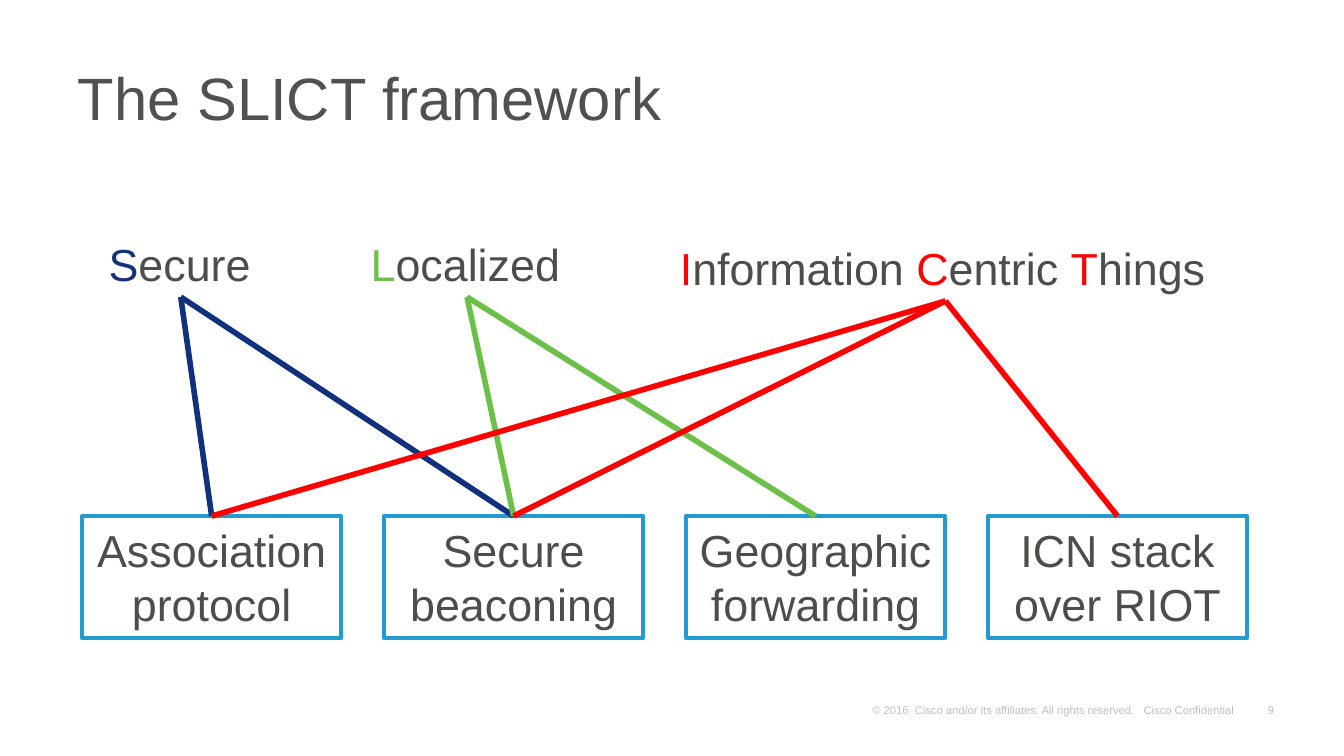
from pptx import Presentation
from pptx.dml.color import RGBColor
from pptx.enum.shapes import MSO_CONNECTOR, MSO_SHAPE
from pptx.enum.text import MSO_ANCHOR, MSO_AUTO_SIZE, PP_ALIGN
from pptx.oxml.ns import qn
from pptx.util import Inches, Pt
from lxml.etree import SubElement

NAVY = RGBColor(0x14, 0x33, 0x7C)
NAVY_LINK = RGBColor(0x11, 0x31, 0x7C)
GREEN = RGBColor(0x6C, 0xC0, 0x4A)
RED = RGBColor(0xFF, 0x00, 0x00)
BLUE = RGBColor(0x23, 0x9B, 0xCF)
GREY = RGBColor(0x4D, 0x4D, 0x4C)
TITLE_GREY = RGBColor(0x51, 0x51, 0x50)
FOOTER_GREY = RGBColor(0xBF, 0xBF, 0xBF)
WHITE = RGBColor(0xFF, 0xFF, 0xFF)

TITLE = "The SLICT framework"
COMPONENTS = ["Association protocol", "Secure beaconing",
              "Geographic forwarding", "ICN stack over RIOT"]
PRINCIPLES = [
    {"words": ["Secure"], "at": (0.71, 1.71, 1.27, 0.5),
     "initial": NAVY, "link": NAVY_LINK, "components": [0, 1]},
    {"words": ["Localized"], "at": (2.66, 1.71, 1.63, 0.5),
     "initial": GREEN, "link": GREEN, "components": [1, 2]},
    {"words": ["Information", "Centric", "Things"], "at": (4.96, 1.74, 4.15, 0.5),
     "initial": RED, "link": RED, "components": [3, 0, 1]},
]
FOOTERS = [
    ("9", (9.31, 5.19, 0.24, 0.17), PP_ALIGN.RIGHT, False),
    ("© 2016  Cisco and/or its affiliates. All rights reserved.   Cisco Confidential",
     (6.42, 5.19, 2.91, 0.17), PP_ALIGN.LEFT, True),
]
SLIDE_WIDTH = 10
SLIDE_HEIGHT = SLIDE_WIDTH * 9 / 16
GRID_LEFT, GRID_RIGHT, GRID_TOP = 0.61, 9.28, 3.84
BOX_WIDTH, BOX_HEIGHT = 1.93, 0.91
COLUMN_PITCH = (GRID_RIGHT - GRID_LEFT - BOX_WIDTH) / (len(COMPONENTS) - 1)
TOP_SITE, BOTTOM_SITE = 0, 2


def add_run(paragraph, text, size, color):
    """Append one formatted run."""
    run = paragraph.add_run()
    run.text = text
    run.font.name = "Arial"
    run.font.size = Pt(size)
    run.font.color.rgb = color


def add_label(slide, at, wrap):
    """Add an empty text box."""
    label = slide.shapes.add_textbox(*map(Inches, at))
    label.text_frame.word_wrap = wrap
    return label


def add_title(slide):
    """Place and format the title."""
    title = slide.shapes.title
    title.left, title.top, title.width, title.height = map(Inches, (0.48, 0.37, 9.13, 0.8))
    title.text_frame.auto_size = MSO_AUTO_SIZE.NONE
    title.text_frame.vertical_anchor = MSO_ANCHOR.MIDDLE
    heading = title.text_frame.paragraphs[0]
    heading.alignment = PP_ALIGN.LEFT
    heading.line_spacing = 0.8
    add_run(heading, TITLE, 32, TITLE_GREY)


def add_footer(slide, text, at, alignment, wrap):
    """Add one small line at the foot of the slide."""
    frame = add_label(slide, at, wrap).text_frame
    frame.margin_left = frame.margin_right = Inches(0.07)
    frame.margin_top = frame.margin_bottom = Inches(0.03)
    frame.vertical_anchor = MSO_ANCHOR.BOTTOM
    frame.paragraphs[0].alignment = alignment
    add_run(frame.paragraphs[0], text, 6, FOOTER_GREY)


def add_principle(slide, principle):
    """Add a principle with coloured initials."""
    label = add_label(slide, principle["at"], False)
    paragraph = label.text_frame.paragraphs[0]
    words = principle["words"]
    for position, word in enumerate(words, 1):
        gap = " " if position < len(words) else ""
        add_run(paragraph, word[0], 24, principle["initial"])
        add_run(paragraph, word[1:] + gap, 24, GREY)
    return label


def add_component(slide, column, name):
    """Add a component box in its grid column."""
    at = (GRID_LEFT + column * COLUMN_PITCH, GRID_TOP, BOX_WIDTH, BOX_HEIGHT)
    box = slide.shapes.add_shape(MSO_SHAPE.RECTANGLE, *map(Inches, at))
    box.shadow.inherit = False
    box.fill.solid()
    box.fill.fore_color.rgb = WHITE
    box.line.color.rgb = BLUE
    box.line.width = Pt(2)
    box.text_frame.word_wrap = True
    box.text_frame.vertical_anchor = MSO_ANCHOR.TOP
    box.text_frame.paragraphs[0].alignment = PP_ALIGN.CENTER
    add_run(box.text_frame.paragraphs[0], name, 24, GREY)
    return box


def add_link(slide, label, box, color):
    """Connect a principle to a component."""
    link = slide.shapes.add_connector(MSO_CONNECTOR.STRAIGHT, 0, 0, 0, 0)
    link.begin_connect(label, BOTTOM_SITE)
    link.end_connect(box, TOP_SITE)
    link.line.color.rgb = color
    link.line.width = Pt(3)
    SubElement(link.element.spPr, qn("a:effectLst"))


def main():
    """Build the framework slide."""
    deck = Presentation()
    deck.slide_width, deck.slide_height = Inches(SLIDE_WIDTH), Inches(SLIDE_HEIGHT)
    slide = deck.slides.add_slide(deck.slide_layouts[5])
    for footer in FOOTERS:
        add_footer(slide, *footer)
    add_title(slide)
    labels = [add_principle(slide, principle) for principle in PRINCIPLES]
    boxes = [add_component(slide, column, name) for column, name in enumerate(COMPONENTS)]
    for principle, label in zip(PRINCIPLES, labels):
        for component in principle["components"]:
            add_link(slide, label, boxes[component], principle["link"])
    deck.save("out.pptx")


if __name__ == "__main__":
    main()
